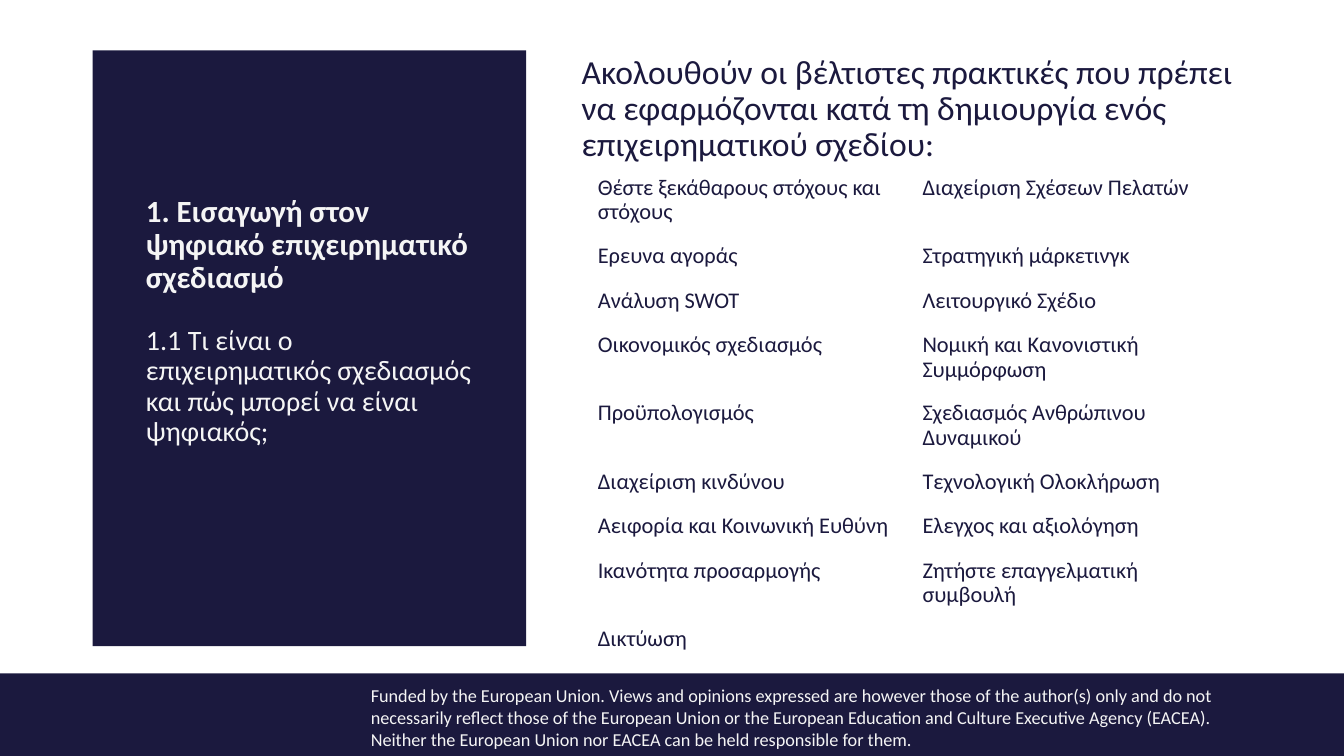
"""Build the slide on best practice for a business plan."""
from dataclasses import dataclass

from pptx import Presentation
from pptx.dml.color import RGBColor
from pptx.enum.shapes import MSO_SHAPE
from pptx.enum.text import MSO_ANCHOR
from pptx.util import Inches, Pt

RECT = MSO_SHAPE.RECTANGLE
TOP, BOTTOM = MSO_ANCHOR.TOP, MSO_ANCHOR.BOTTOM


@dataclass(frozen=True)
class Theme:
    font: str = "Calibri"
    navy: RGBColor = RGBColor(0x1B, 0x19, 0x3E)
    pale: RGBColor = RGBColor(0xF5, 0xF5, 0xF5)
    lead: int = 24
    title: int = 22
    topic: int = 20
    cell: int = 16
    note: int = 13


def write(frame, text, size, color, bold=False, spacing=0.9):
    para = frame.paragraphs[0]
    para.line_spacing = spacing
    para.font.size = Pt(size)
    run = para.add_run()
    run.text = text
    run.font.name = THEME.font
    run.font.size = Pt(size)
    run.font.bold = bold
    run.font.color.rgb = color


class Canvas:
    def __init__(self, slide, theme):
        self.slide = slide
        self.theme = theme

    def panel(self, *box):
        shape = self.slide.shapes.add_shape(RECT, *map(Inches, box))
        shape.shadow.inherit = False
        shape.fill.solid()
        shape.fill.fore_color.rgb = self.theme.navy
        shape.line.fill.background()

    def text(self, text, box, anchor=TOP, **style):
        frame = self.slide.shapes.add_textbox(*map(Inches, box)).text_frame
        frame.word_wrap = True
        frame.vertical_anchor = anchor
        write(frame, text, **style)

    def table(self, rows, box, heights):
        grid = self.slide.shapes.add_table(
            len(rows), len(rows[0]), *map(Inches, box)).table
        grid.first_row = grid.horz_banding = False
        for row, height, texts in zip(grid.rows, heights, rows):
            row.height = Inches(height)
            for cell, text in zip(row.cells, texts):
                cell.fill.background()
                cell.margin_left = cell.margin_right = Inches(0.1)
                cell.margin_top = cell.margin_bottom = Inches(0.1)
                write(cell.text_frame, text, self.theme.cell, self.theme.navy)


THEME = Theme()
STEPS = [
    ("Θέστε ξεκάθαρους στόχους και στόχους", "Διαχείριση Σχέσεων Πελατών"),
    ("Ερευνα αγοράς", "Στρατηγική μάρκετινγκ"),
    ("Ανάλυση SWOT", "Λειτουργικό Σχέδιο"),
    ("Οικονομικός σχεδιασμός", "Νομική και Κανονιστική Συμμόρφωση"),
    ("Προϋπολογισμός", "Σχεδιασμός Ανθρώπινου Δυναμικού"),
    ("Διαχείριση κινδύνου", "Τεχνολογική Ολοκλήρωση"),
    ("Αειφορία και Κοινωνική Ευθύνη", "Ελεγχος και αξιολόγηση"),
    ("Ικανότητα προσαρμογής", "Ζητήστε επαγγελματική συμβουλή"),
    ("Δικτύωση", ""),
]
NOTE = (
    "Funded by the European Union. Views and opinions expressed are however "
    "those of the author(s) only and do not necessarily reflect those of the "
    "European Union or the European Education and Culture Executive Agency "
    "(EACEA). Neither the European Union nor EACEA can be held responsible "
    "for them."
)


def main():
    deck = Presentation()
    deck.slide_width, deck.slide_height = Inches(13.33), Inches(7.5)
    page = Canvas(deck.slides.add_slide(deck.slide_layouts[6]), THEME)

    page.panel(0.92, 0.5, 4.3, 5.91)
    page.panel(0, 6.68, 13.33, 0.82)
    page.text(NOTE, (3.58, 6.74, 8.84, 0.76),
              size=THEME.note, color=THEME.pale, spacing=1.0)
    page.text("1. Εισαγωγή στον ψηφιακό επιχειρηματικό σχεδιασμό",
              (1.35, 1.95, 3.43, 1.03), BOTTOM,
              size=THEME.title, color=THEME.pale, bold=True)
    page.text("1.1 Τι είναι ο επιχειρηματικός σχεδιασμός και πώς μπορεί "
              "να είναι ψηφιακός;", (1.35, 3.19, 3.43, 2.81),
              size=THEME.topic, color=THEME.pale)
    page.text("Ακολουθούν οι βέλτιστες πρακτικές που πρέπει να εφαρμόζονται "
              "κατά τη δημιουργία ενός επιχειρηματικού σχεδίου:",
              (5.67, 0.5, 6.75, 5.91), size=THEME.lead, color=THEME.navy)
    heights = [0.63] + [0.42] * (len(STEPS) - 1)
    page.table(STEPS, (5.83, 1.64, 6.44, sum(heights)), heights)
    deck.save("out.pptx")


if __name__ == "__main__":
    main()
